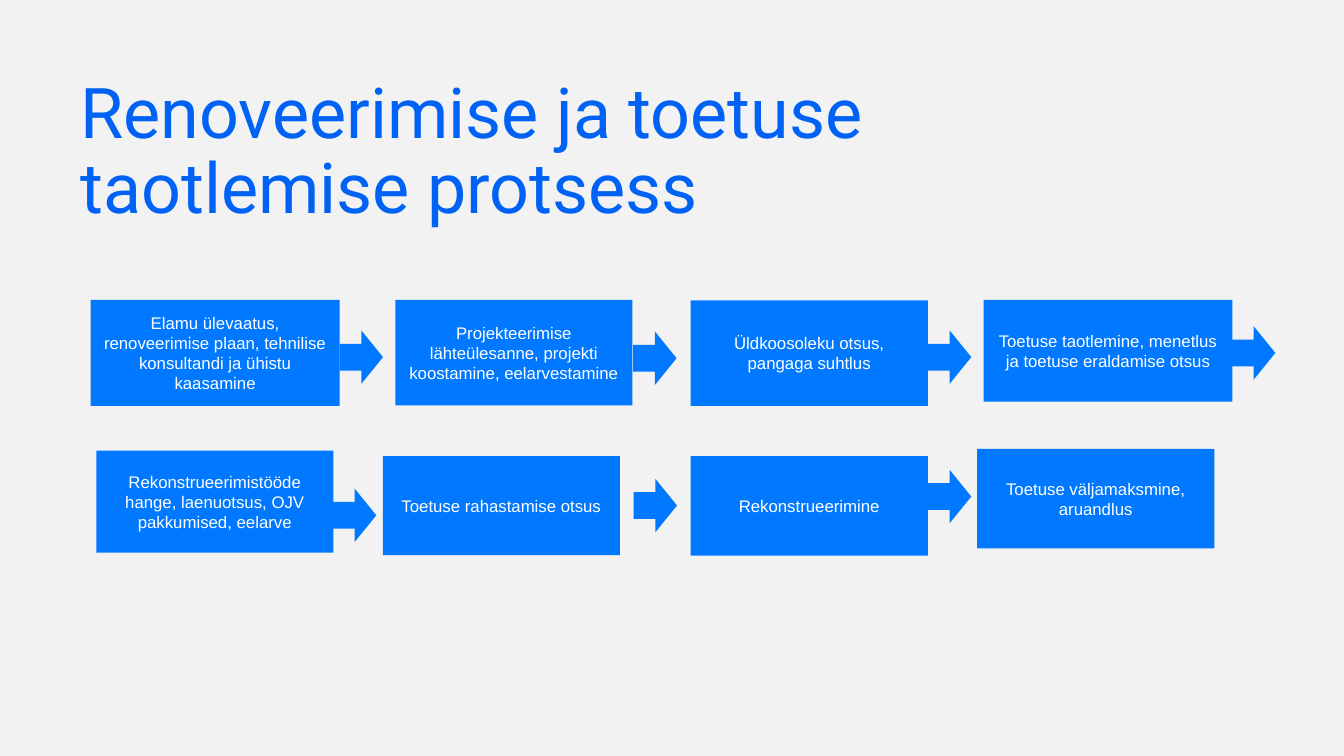
"""Build the slide on the renovation and grant application process."""
from pptx import Presentation
from pptx.dml.color import RGBColor
from pptx.enum.shapes import MSO_SHAPE
from pptx.enum.text import MSO_ANCHOR, MSO_AUTO_SIZE, PP_ALIGN
from pptx.util import Pt

RECTANGLE, RIGHT_ARROW = MSO_SHAPE.RECTANGLE, MSO_SHAPE.RIGHT_ARROW
TOP, MIDDLE = MSO_ANCHOR.TOP, MSO_ANCHOR.MIDDLE
LEFT, CENTER = PP_ALIGN.LEFT, PP_ALIGN.CENTER
NO_FIT = MSO_AUTO_SIZE.NONE

TITLE = "Renoveerimise ja toetuse taotlemise protsess"
BACKGROUND, PANEL, BLUE, TITLE_BLUE, WHITE = "F2F2F2", "F0F1F1", "0078FF", "0062F5", "FFFFFF"
WIDE, NARROW = 177.8, 169.4
ARROW_WIDTH, ARROW_HEIGHT = 31, 38.2

# Each step: text, left, top, width, height, gap before its arrow, arrow top
STEPS = [
    ("Elamu ülevaatus, renoveerimise plaan, tehnilise konsultandi ja ühistu kaasamine",
     64.8, 214.2, WIDE, 75.8, 0, 236),
    ("Projekteerimise lähteülesanne, projekti koostamine, eelarvestamine",
     282.4, 214.2, NARROW, 75.4, 0.5, 236.8),
    ("Üldkoosoleku otsus, pangaga suhtlus", 493.4, 214.6, NARROW, 75.4, 0, 236),
    ("Toetuse taotlemine, menetlus ja toetuse eraldamise otsus",
     702.6, 214.2, WIDE, 72.8, -0.4, 233),
    ("Rekonstrueerimistööde hange, laenuotsus, OJV pakkumised, eelarve",
     68.8, 321.8, NARROW, 73, -0.4, 349),
    ("Toetuse rahastamise otsus", 273.5, 325.8, NARROW, 70.7, 9.7, 342),
    ("Rekonstrueerimine", 493.4, 325.8, NARROW, 71.2, 0, 335.6),
    ("Toetuse väljamaksmine, aruandlus", 698, 320.7, NARROW, 71, None, None),
]


def color(value):
    return RGBColor.from_string(value)


def add_block(page, kind, left, top, width, height, fill):
    block = page.shapes.add_shape(kind, Pt(left), Pt(top), Pt(width), Pt(height))
    block.shadow.inherit = False
    block.fill.solid()
    block.fill.fore_color.rgb = color(fill)
    block.line.fill.background()
    return block


def write(box, text, size, name, value, align, anchor):
    frame = box.text_frame
    frame.word_wrap = True
    frame.auto_size = NO_FIT
    frame.vertical_anchor = anchor
    para = frame.paragraphs[0]
    para.text = text
    para.alignment = align
    para.font.size = Pt(size)
    para.font.name = name
    para.font.color.rgb = color(value)
    return para


def main():
    deck = Presentation()
    deck.slide_width, deck.slide_height = Pt(960), Pt(540)
    page = deck.slides.add_slide(deck.slide_layouts[5])
    page.background.fill.solid()
    page.background.fill.fore_color.rgb = color(BACKGROUND)

    title = page.shapes.title
    title.left, title.top, title.width, title.height = Pt(50.4), Pt(52), Pt(743), Pt(58.3)
    write(title, TITLE, 50, "Roboto", TITLE_BLUE, LEFT, TOP).line_spacing = 0.9
    add_block(page, RECTANGLE, 776.2, 512.6, 168.5, 26.6, PANEL)

    for text, left, top, width, height, gap, arrow_top in STEPS:
        box = add_block(page, RECTANGLE, left, top, width, height, BLUE)
        write(box, text, 12, "Arial", WHITE, CENTER, MIDDLE)
        if arrow_top is not None:
            add_block(page, RIGHT_ARROW, left + width + gap, arrow_top,
                      ARROW_WIDTH, ARROW_HEIGHT, BLUE)

    deck.save("out.pptx")


if __name__ == "__main__":
    main()
